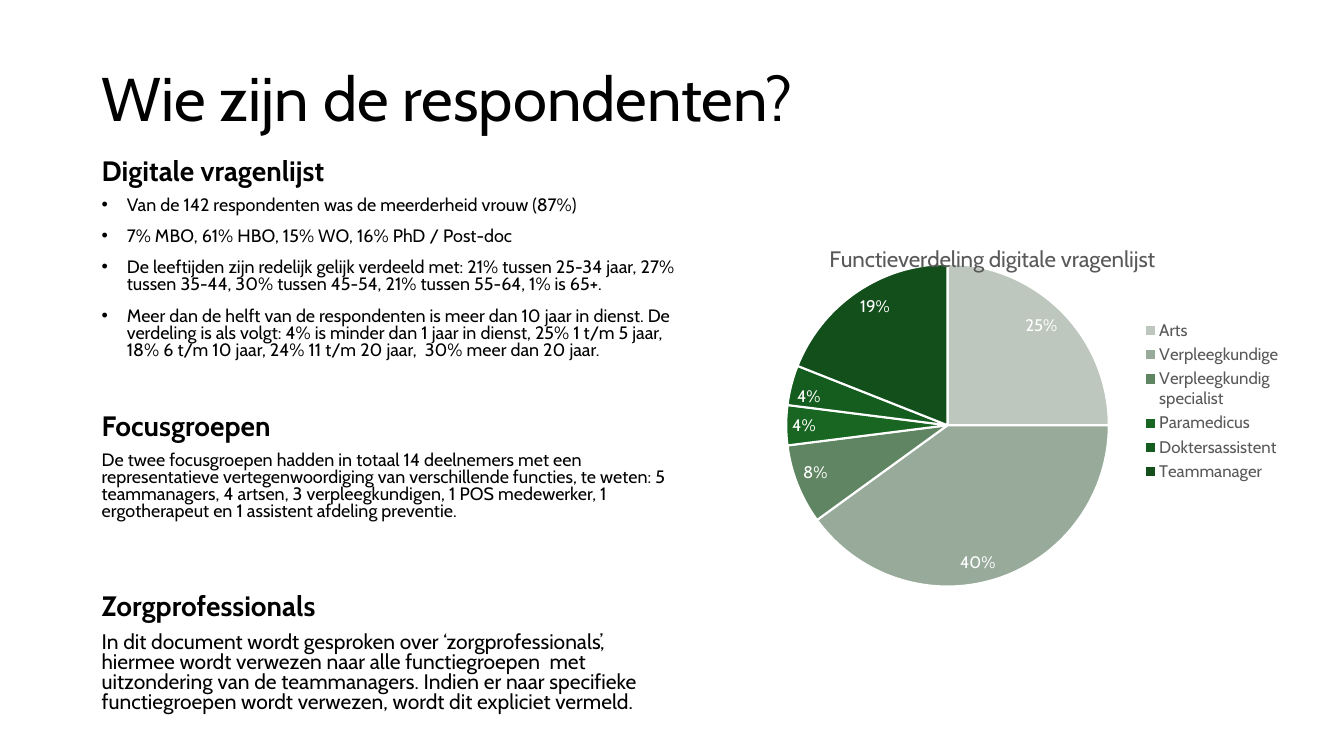
from dataclasses import dataclass

from lxml.etree import SubElement
from pptx import Presentation
from pptx.chart.chart import Chart
from pptx.chart.data import CategoryChartData
from pptx.dml.color import RGBColor
from pptx.enum.chart import XL_CHART_TYPE, XL_LABEL_POSITION, XL_LEGEND_POSITION
from pptx.enum.text import MSO_ANCHOR, MSO_AUTO_SIZE, PP_ALIGN
from pptx.oxml import parse_xml
from pptx.oxml.ns import nsdecls, qn
from pptx.slide import Slide
from pptx.text.text import Font, TextFrame
from pptx.util import Inches, Pt


@dataclass(frozen=True)
class Theme:
    font: str = "Cabin"
    ink: str = "000000"
    muted: str = "595959"
    paper: str = "FFFFFF"
    title: float = 44
    heading: float = 20
    small: float = 12.8
    body: float = 15
    chart_title: float = 16
    chart_text: float = 12
    gap: float = 10
    slices: tuple[str, ...] = ("BDC7BE", "98AA99", "5F8562", "186622", "155C1F", "124F1B")


@dataclass(frozen=True)
class TextBlock:
    top: float
    width: float
    height: float
    size: float
    lines: tuple[str, ...]
    heading: bool = False
    bullets: bool = False


THEME = Theme()
LEFT = 0.91

BLOCKS = (
    TextBlock(1.01, 5.64, 0.9, THEME.heading, ("Digitale vragenlijst",), heading=True),
    TextBlock(1.91, 5.92, 1.84, THEME.small, (
        "Van de 142 respondenten was de meerderheid vrouw (87%)",
        "7% MBO, 61% HBO, 15% WO, 16% PhD / Post-doc",
        "De leeftijden zijn redelijk gelijk verdeeld met: 21% tussen 25-34 jaar, 27% "
        "tussen 35-44, 30% tussen 45-54, 21% tussen 55-64, 1% is 65+.",
        "Meer dan de helft van de respondenten is meer dan 10 jaar in dienst. De "
        "verdeling is als volgt: 4% is minder dan 1 jaar in dienst, 25% 1 t/m 5 jaar, "
        "18% 6 t/m 10 jaar, 24% 11 t/m 20 jaar,  30% meer dan 20 jaar.",
    ), bullets=True),
    TextBlock(3.93, 4.55, 0.51, THEME.heading, ("Focusgroepen",), heading=True),
    TextBlock(4.44, 5.92, 0.94, THEME.small, (
        "De twee focusgroepen hadden in totaal 14 deelnemers met een representatieve "
        "vertegenwoordiging van verschillende functies, te weten: 5 teammanagers, "
        "4 artsen, 3 verpleegkundigen, 1 POS medewerker, 1 ergotherapeut en "
        "1 assistent afdeling preventie.",
    )),
    TextBlock(5.72, 4.55, 0.51, THEME.heading, ("Zorgprofessionals",), heading=True),
    TextBlock(6.23, 5.92, 0.94, THEME.body, (
        "In dit document wordt gesproken over ‘zorgprofessionals’, hiermee wordt "
        "verwezen naar alle functiegroepen  met uitzondering van de teammanagers. "
        "Indien er naar specifieke functiegroepen wordt verwezen, wordt dit expliciet "
        "vermeld.",
    )),
)

RESPONDENTS = {
    "Arts": 25,
    "Verpleegkundige": 40,
    "Verpleegkundig specialist": 8,
    "Paramedicus": 4,
    "Doktersassistent": 4,
    "Teammanager": 19,
}


def style_font(font: Font, size: float, color: str, bold: bool = False) -> None:
    font.name = THEME.font
    font.size = Pt(size)
    font.bold = bold
    font.color.rgb = RGBColor.from_string(color)


def prepare_frame(frame: TextFrame, anchor: MSO_ANCHOR) -> None:
    frame.word_wrap = True
    frame.auto_size = MSO_AUTO_SIZE.NONE
    frame.vertical_anchor = anchor


def add_title(page: Slide, text: str) -> None:
    title = page.shapes.title
    title.left, title.top = Inches(LEFT), Inches(0.28)
    title.width, title.height = Inches(11.5), Inches(1.45)
    prepare_frame(title.text_frame, MSO_ANCHOR.MIDDLE)
    para = title.text_frame.paragraphs[0]
    para.text = text
    para.alignment = PP_ALIGN.LEFT
    para.line_spacing = 0.9
    style_font(para.font, THEME.title, THEME.ink)


def add_text(page: Slide, block: TextBlock) -> None:
    box = page.shapes.add_textbox(
        Inches(LEFT), Inches(block.top), Inches(block.width), Inches(block.height))
    frame = box.text_frame
    prepare_frame(frame, MSO_ANCHOR.BOTTOM if block.heading else MSO_ANCHOR.TOP)
    for index, line in enumerate(block.lines):
        para = frame.add_paragraph() if index else frame.paragraphs[0]
        para.text = line
        para.line_spacing = 0.9 if block.heading else 0.8
        para.space_before = Pt(THEME.gap)
        if block.bullets:
            properties = para._p.get_or_add_pPr()
            properties.set("marL", str(Inches(0.25)))
            properties.set("indent", str(-Inches(0.25)))
            SubElement(properties, qn("a:buFont")).set("typeface", "Arial")
            SubElement(properties, qn("a:buChar")).set("char", "•")
        style_font(para.font, block.size, THEME.ink, block.heading)


def place_part(chart: Chart, tag: str, index: int, **fractions: float) -> None:
    """Fix a chart part at fractions of the chart's size."""
    part = next(chart._chartSpace.iter(qn(tag)))
    for layout in part.findall(qn("c:layout")):
        part.remove(layout)
    modes = {"xMode": "edge", "yMode": "edge"}
    if tag == "c:plotArea":
        modes = {"layoutTarget": "inner", **modes}
    settings = "".join(
        f'<c:{name} val="{value}"/>' for name, value in {**modes, **fractions}.items())
    part.insert(index, parse_xml(
        f'<c:layout {nsdecls("c")}><c:manualLayout>{settings}</c:manualLayout></c:layout>'))


def add_pie(page: Slide) -> None:
    data = CategoryChartData()
    data.categories = list(RESPONDENTS)
    data.add_series("Series 1", list(RESPONDENTS.values()))
    chart = page.shapes.add_chart(
        XL_CHART_TYPE.PIE, Inches(7.17), Inches(1.98), Inches(5.64), Inches(4), data).chart
    style_font(chart.font, 10, THEME.ink)

    # Chart title and legend
    chart.has_title = True
    para = chart.chart_title.text_frame.paragraphs[0]
    para.text = "Functieverdeling digitale vragenlijst"
    style_font(para.font, THEME.chart_title, THEME.muted)
    style_font(para.runs[0].font, THEME.chart_title, THEME.muted)
    chart.has_legend = True
    chart.legend.position = XL_LEGEND_POSITION.RIGHT
    chart.legend.include_in_layout = False
    style_font(chart.legend.font, THEME.chart_text, THEME.muted)

    # Slices and percentages
    plot = chart.plots[0]
    plot.vary_by_categories = True
    for index, color in enumerate(THEME.slices):
        slice_format = plot.series[0].points[index].format
        slice_format.fill.solid()
        slice_format.fill.fore_color.rgb = RGBColor.from_string(color)
        slice_format.line.color.rgb = RGBColor.from_string(THEME.paper)
        slice_format.line.width = Pt(1.5)
    plot.has_data_labels = True
    labels = plot.data_labels
    labels.show_value = False
    labels.show_percentage = True
    labels.number_format = "0%"
    labels.number_format_is_linked = False
    labels.position = XL_LABEL_POSITION.INSIDE_END
    style_font(labels.font, THEME.chart_text, THEME.paper)

    place_part(chart, "c:title", 1, x=0.18, y=0.1)
    place_part(chart, "c:plotArea", 0, x=0.11, y=0.16, w=0.57, h=0.8)
    place_part(chart, "c:legend", 1, x=0.73, y=0.29, w=0.26, h=0.42)


def main() -> None:
    deck = Presentation()
    deck.slide_width, deck.slide_height = Inches(13.33), Inches(7.5)
    page = deck.slides.add_slide(deck.slide_layouts[5])
    add_title(page, "Wie zijn de respondenten?")
    for block in BLOCKS:
        add_text(page, block)
    add_pie(page)
    deck.save("out.pptx")


if __name__ == "__main__":
    main()
